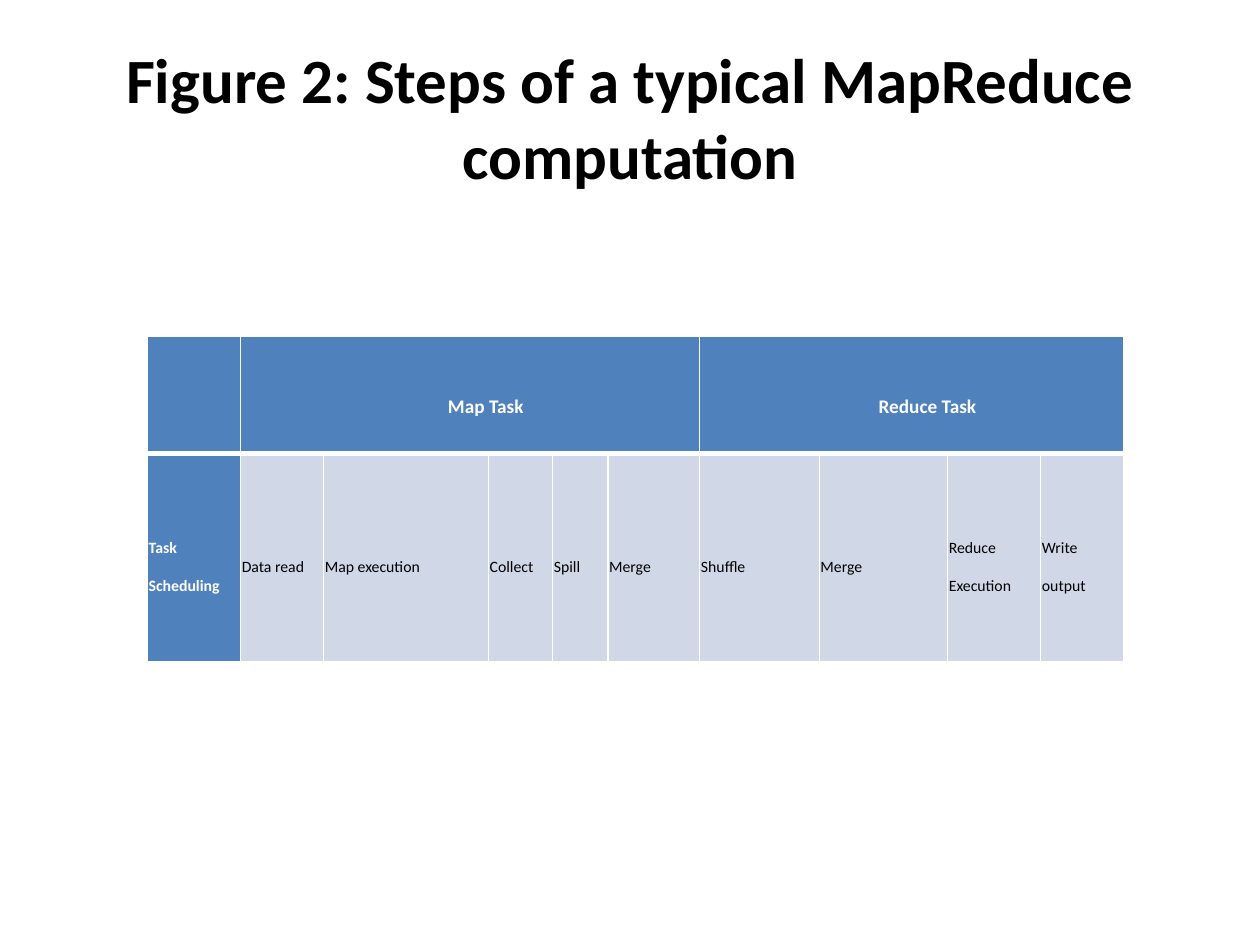
from lxml import etree
from pptx import Presentation
from pptx.dml.color import RGBColor
from pptx.enum.text import MSO_ANCHOR, PP_ALIGN
from pptx.oxml.ns import qn
from pptx.util import Inches, Pt

MIDDLE = MSO_ANCHOR.MIDDLE
CENTER, JUSTIFY = PP_ALIGN.CENTER, PP_ALIGN.JUSTIFY
BLUE, PALE, WHITE, BLACK = "4F81BD", "D0D8E8", "FFFFFF", "000000"


def color(value):
    return RGBColor.from_string(value)


def write(frame, text, align, ink, font):
    para = frame.paragraphs[0]
    para.alignment = align
    span = para.add_run()
    span.text = text
    span.font.color.rgb = color(ink)
    for name, value in font.items():
        setattr(span.font, name, value)
    return para


deck = Presentation()
deck.slide_width, deck.slide_height = Inches(10), Inches(7.5)
wide, high = deck.slide_width, deck.slide_height
page = deck.slides.add_slide(deck.slide_layouts[6])

box = page.shapes.add_textbox(int(wide * 0.05), int(high * 0.04), int(wide * 0.9), int(high / 6))
box.text_frame.word_wrap = True
box.text_frame.vertical_anchor = MIDDLE
write(box.text_frame, "Figure 2: Steps of a typical MapReduce computation", CENTER, BLACK,
      {"name": "Calibri", "size": Pt(36), "bold": True})

steps = [
    ("Task Scheduling", 0.74), ("Data read", 0.66), ("Map execution", 1.31),
    ("Collect", 0.51), ("Spill", 0.44), ("Merge", 0.73), ("Shuffle", 0.95),
    ("Merge", 1.02), ("Reduce Execution", 0.74), ("Write output", 0.66),
]
phases = [("Map Task", 1, 5), ("Reduce Task", 6, 9)]
row_shares = [0.36, 0.64]

table_width, table_height = wide * 0.775, high * 0.344
table = page.shapes.add_table(len(row_shares), len(steps), int(wide * 0.117), int(high * 0.356),
                              int(table_width), int(table_height)).table
total = sum(weight for _, weight in steps)
for column, (_, weight) in zip(table.columns, steps):
    column.width = int(table_width * weight / total)
for row, share in zip(table.rows, row_shares):
    row.height = int(table_height * share)

for r in range(len(row_shares)):
    for c in range(len(steps)):
        cell = table.cell(r, c)
        inset = Inches(0.01) if r else Inches(0.08)
        format_values = {"vertical_anchor": MIDDLE, "margin_left": inset, "margin_right": inset,
                         "margin_top": 0, "margin_bottom": 0}
        for name, value in format_values.items():
            setattr(cell, name, value)
        properties = cell._tc.get_or_add_tcPr()
        thick_side = "T" if r else "B"
        for side in "LRTB":
            points = 3 if side == thick_side else 1
            line = etree.SubElement(properties, qn(f"a:ln{side}"), w=str(Pt(points)))
            fill = etree.SubElement(line, qn("a:solidFill"))
            etree.SubElement(fill, qn("a:srgbClr"), val=WHITE)
        cell.fill.solid()
        cell.fill.fore_color.rgb = color(PALE if r and c else BLUE)

for text, first, last in phases:
    cell = table.cell(0, first)
    cell.merge(table.cell(0, last))
    para = write(cell.text_frame, text, CENTER, WHITE,
                 {"name": "Calibri", "size": Pt(11), "bold": True})
    para.line_spacing = 2.0
    indent = para._p.get_or_add_pPr()
    indent.set("marL", "0")
    indent.set("indent", str(Inches(0.25)))

for c, (text, _) in enumerate(steps):
    para = write(table.cell(1, c).text_frame, text, JUSTIFY, BLACK if c else WHITE,
                 {"name": "Calibri", "size": Pt(9), "bold": c == 0})
    para.line_spacing = 2.0

deck.save("out.pptx")
